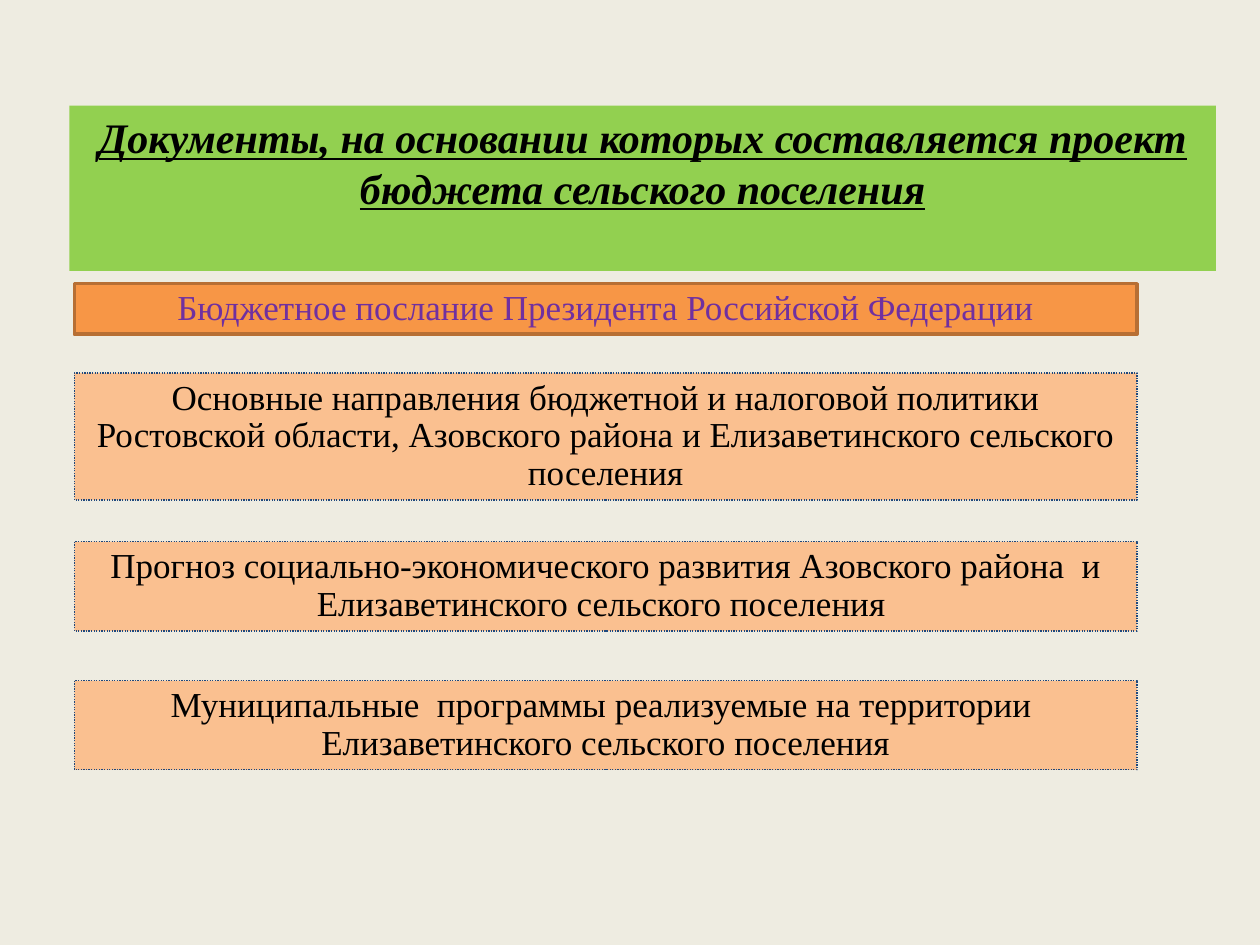
from dataclasses import dataclass

from pptx import Presentation
from pptx import util as u
from pptx.dml.color import RGBColor
from pptx.enum import dml, shapes, text

BACKGROUND = RGBColor(0xEE, 0xEC, 0xE1)
GREEN = RGBColor(0x92, 0xD0, 0x50)
ORANGE = RGBColor(0xF7, 0x96, 0x46)
BROWN = RGBColor(0xB7, 0x6F, 0x34)
PEACH = RGBColor(0xFA, 0xC0, 0x90)
NAVY = RGBColor(0x1F, 0x49, 0x7D)
PURPLE = RGBColor(0x70, 0x30, 0xA0)
BLACK = RGBColor(0, 0, 0)

FONT = "Times New Roman"
BOX_LEFT = u.Cm(1.5)
BOX_WIDTH = u.Cm(21.42)


@dataclass
class Document:
    label: str
    top: float
    height: float
    fill: RGBColor = PEACH
    line: RGBColor = NAVY
    line_width: float = 0.75
    dash: dml.MSO_LINE = dml.MSO_LINE.ROUND_DOT
    color: RGBColor = BLACK


DOCUMENTS = [
    Document("Бюджетное послание Президента Российской Федерации", 5.72, 1.02,
             ORANGE, BROWN, 2, dml.MSO_LINE.SOLID, PURPLE),
    Document("Основные направления бюджетной и налоговой политики Ростовской "
             "области, Азовского района и Елизаветинского сельского поселения",
             7.52, 2.56),
    Document("Прогноз социально-экономического развития Азовского района  и "
             "Елизаветинского сельского поселения ", 10.92, 1.8),
    Document("Муниципальные  программы реализуемые на территории  "
             "Елизаветинского сельского поселения", 13.72, 1.8),
]


def write_text(sp, label: str, size: float, color: RGBColor,
               anchor: text.MSO_ANCHOR):
    tf = sp.text_frame
    tf.text = label
    tf.word_wrap = True
    tf.auto_size = text.MSO_AUTO_SIZE.NONE
    tf.vertical_anchor = anchor
    p = tf.paragraphs[0]
    p.alignment = text.PP_ALIGN.CENTER
    r = p.runs[0]
    r.font.name = FONT
    r.font.size = u.Pt(size)
    r.font.color.rgb = color
    return p


def draw_title(s, label: str) -> None:
    sp = s.shapes.title
    sp.left, sp.top = u.Cm(1.4), u.Cm(2.13)
    sp.width, sp.height = u.Cm(23.11), u.Cm(3.33)
    sp.fill.solid()
    sp.fill.fore_color.rgb = GREEN
    p = write_text(sp, label, 24, BLACK, text.MSO_ANCHOR.TOP)
    font = p.runs[0].font
    font.bold = font.italic = font.underline = True


def draw_document(s, doc: Document) -> None:
    sp = s.shapes.add_shape(shapes.MSO_SHAPE.RECTANGLE, BOX_LEFT,
                            u.Cm(doc.top), BOX_WIDTH, u.Cm(doc.height))
    sp.shadow.inherit = False
    sp.fill.solid()
    sp.fill.fore_color.rgb = doc.fill
    sp.line.color.rgb = doc.line
    sp.line.width = u.Pt(doc.line_width)
    sp.line.dash_style = doc.dash
    p = write_text(sp, doc.label, 20, doc.color, text.MSO_ANCHOR.MIDDLE)
    p.line_spacing = 0.9


def main() -> None:
    prs = Presentation()
    prs.slide_width, prs.slide_height = u.Cm(25.4), u.Cm(19.05)
    s = prs.slides.add_slide(prs.slide_layouts[5])
    s.background.fill.solid()
    s.background.fill.fore_color.rgb = BACKGROUND
    draw_title(s, "Документы, на основании которых составляется проект "
                  "бюджета сельского поселения")
    for doc in DOCUMENTS:
        draw_document(s, doc)
    prs.save("out.pptx")


if __name__ == "__main__":
    main()
